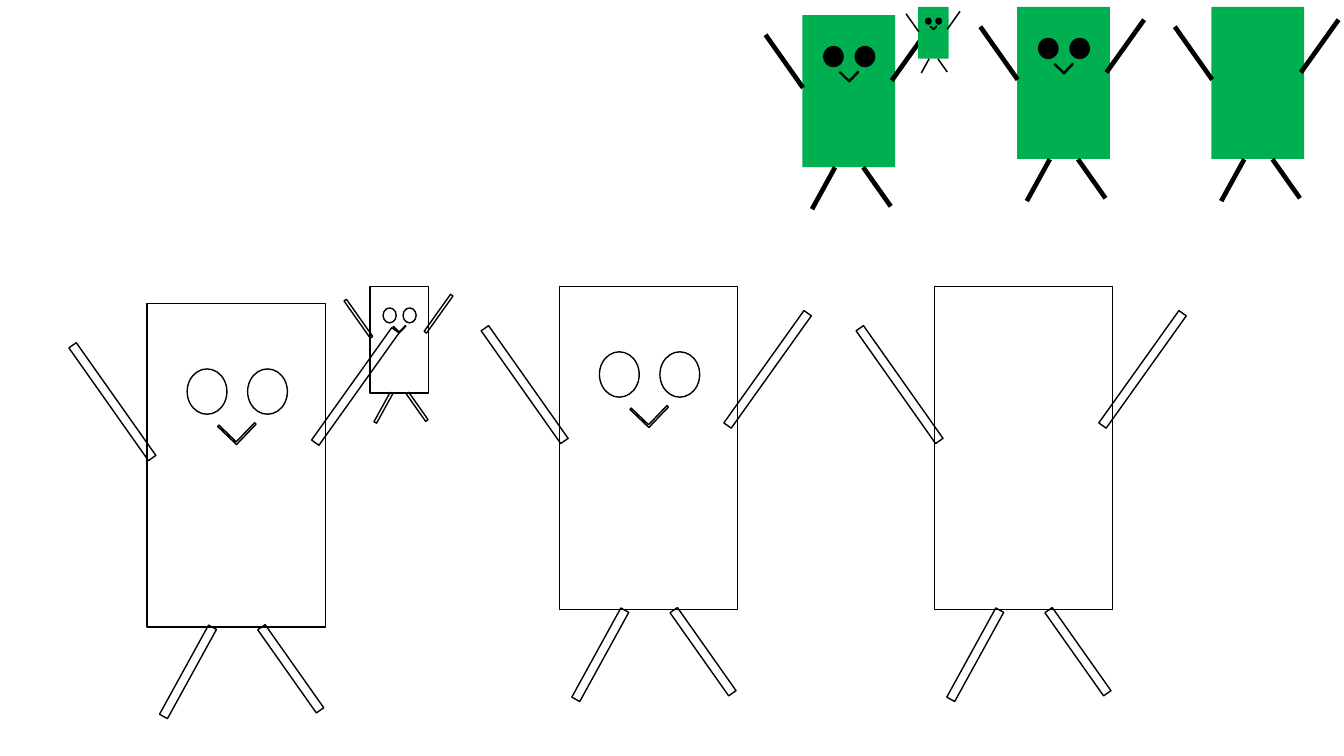
from pptx import Presentation
from pptx import util as u
from pptx.dml import color
from pptx.enum import shapes

Pt = u.Pt
kind = shapes.MSO_SHAPE


def rgb(hue):
    return color.RGBColor.from_string(hue)


deck = Presentation()
deck.slide_width, deck.slide_height = Pt(960), Pt(540)
slide = deck.slides.add_slide(deck.slide_layouts[6])

parts = [
    ("body", kind.RECTANGLE, 63.72, 115.56, 127.44, 231.12, 0),
    ("eye", kind.OVAL, 42.8, 63, 28.4, 32.4, 0),
    ("eye", kind.OVAL, 86, 63, 28.4, 32.4, 0),
    ("mouth", kind.CORNER, 64.1, 87.1, 20.2, 18.7, 313.8),
    ("limb", kind.RECTANGLE, 148.7, 59.4, 6.5, 98.6, 35.5),
    ("limb", kind.RECTANGLE, -24.8, 70.2, 6.5, 98.6, 324.8),
    ("limb", kind.RECTANGLE, 102.6, 261, 6.5, 72.7, 324.8),
    ("limb", kind.RECTANGLE, 29.2, 263.2, 6.5, 72.7, 28.8),
]

crowds = [
    (False, [
        (105.1, 216.7, 1, 1, True),
        (264.2, 204.5, 0.33, 0.33, True),
        (399.6, 204.5, 1, 1, True),
        (667.4, 204.5, 1, 1, False),
    ]),
    (True, [
        (573.1, 10.8, 0.52, 0.47, True),
        (655.9, 5, 0.17, 0.16, True),
        (726.5, 5, 0.52, 0.47, True),
        (865.4, 5, 0.52, 0.47, False),
    ]),
]

for solid, figures in crowds:
    group = slide.shapes.add_group_shape()
    for left, top, wide, tall, face in figures:
        for name, form, x, y, w, h, turn in parts:
            if name in ("eye", "mouth") and not face:
                continue
            if name == "mouth":
                w, h = w * tall, h * wide
            else:
                w, h = w * wide, h * tall
            x, y = left + x * wide - w / 2, top + y * tall - h / 2
            part = group.shapes.add_shape(form, Pt(x), Pt(y), Pt(w), Pt(h))
            part.rotation = turn
            part.shadow.inherit = False
            if name == "mouth":
                part.adjustments[0] = 0.08
                part.adjustments[1] = 0.07
            if solid:
                part.fill.solid()
                part.fill.fore_color.rgb = rgb("00B050" if name == "body" else "000000")
            else:
                part.fill.background()
            if solid and name != "mouth":
                part.line.fill.background()
            else:
                part.line.color.rgb = rgb("000000")
                part.line.width = Pt(1)

deck.save("out.pptx")
